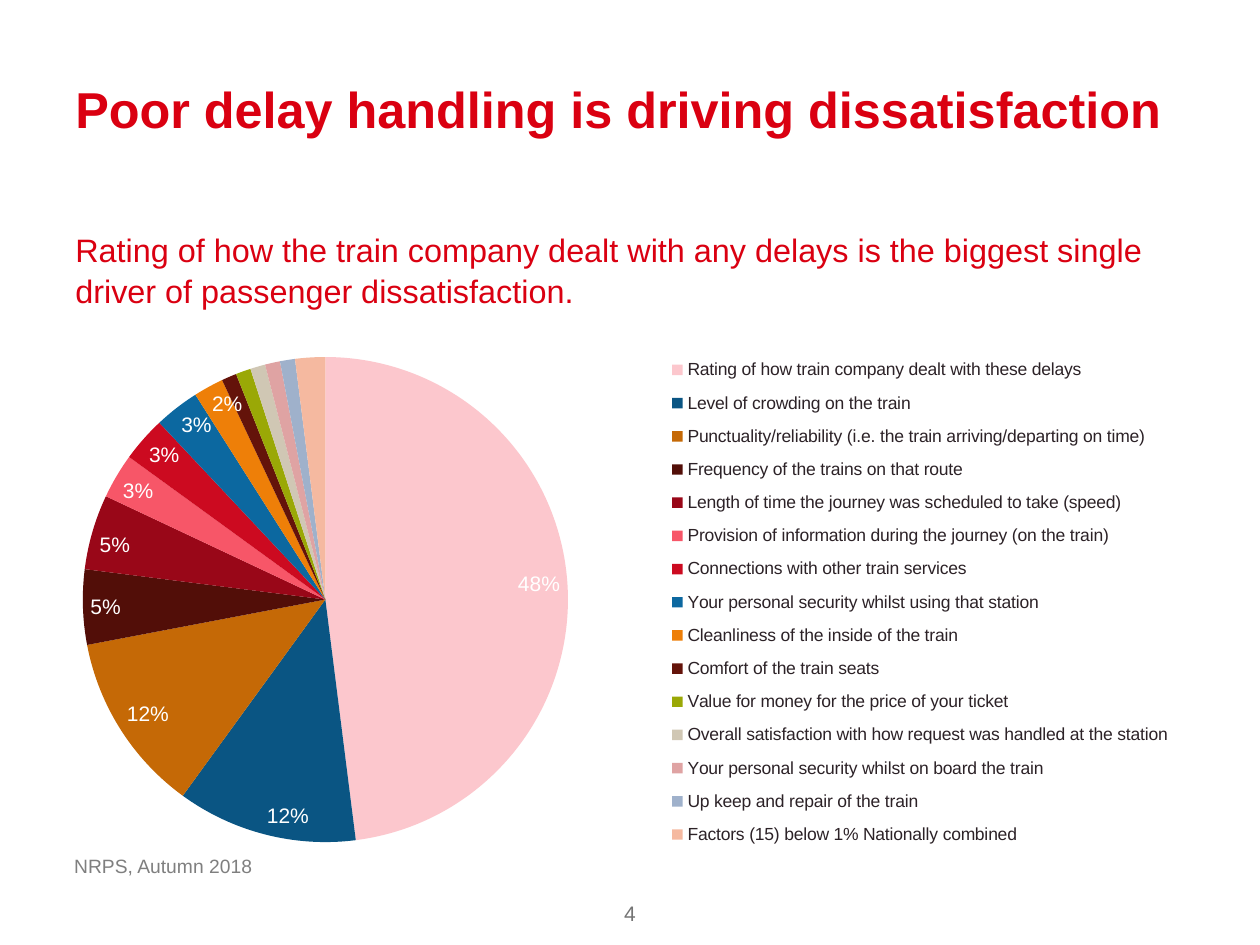
from lxml import etree
from pptx import Presentation
from pptx.chart.data import CategoryChartData
from pptx.dml.color import RGBColor
from pptx.enum.chart import XL_CHART_TYPE, XL_LABEL_POSITION, XL_LEGEND_POSITION
from pptx.enum.text import PP_ALIGN
from pptx.oxml.ns import qn
from pptx.util import Inches, Pt

PIE = XL_CHART_TYPE.PIE
INSIDE_END = XL_LABEL_POSITION.INSIDE_END
RIGHT = XL_LEGEND_POSITION.RIGHT
LEFT, CENTER = PP_ALIGN.LEFT, PP_ALIGN.CENTER
FONT = "Arial"
COLORS = {
    "heading": "DA0011",
    "source": "7F7F7F",
    "number": "747474",
    "legend": "2C2227",
    "label": "FFFFFF",
}
DRIVERS = [
    ("Rating of how train company dealt with these delays", 48, "FCC7CD"),
    ("Level of crowding on the train", 12, "0A5583"),
    ("Punctuality/reliability (i.e. the train arriving/departing on time)", 12, "C56906"),
    ("Frequency of the trains on that route", 5, "520E08"),
    ("Length of time the journey was scheduled to take (speed)", 5, "990718"),
    ("Provision of information during the journey (on the train)", 3, "F75668"),
    ("Connections with other train services", 3, "CC0A20"),
    ("Your personal security whilst using that station", 3, "0C68A0"),
    ("Cleanliness of the inside of the train", 2, "EE7F08"),
    ("Comfort of the train seats", 1, "64130A"),
    ("Value for money for the price of your ticket", 1, "9AA806"),
    ("Overall satisfaction with how request was handled at the station", 1, "D0C7B4"),
    ("Your personal security whilst on board the train", 1, "DFA3A3"),
    ("Up keep and repair of the train", 1, "9FB1CB"),
    ("Factors (15) below 1% Nationally combined", 2, "F5B9A0"),
]
LABELLED = 9


def style_font(font, size, color, bold=False):
    """Apply the slide's typeface with a size, colour and weight."""
    font.name = FONT
    font.size = Pt(size)
    font.bold = bold
    font.color.rgb = RGBColor.from_string(COLORS[color])


def add_text(slide, box, text, size, color, bold=False, align=LEFT, spacing=1.0, top=0.05):
    """Place one formatted paragraph in a box of inches."""
    frame = slide.shapes.add_textbox(*map(Inches, box)).text_frame
    frame.word_wrap = True
    frame.margin_top = Inches(top)
    paragraph = frame.paragraphs[0]
    paragraph.alignment = align
    paragraph.line_spacing = spacing
    run = paragraph.add_run()
    run.text = text
    style_font(run.font, size, color, bold)


def set_layout(parent, before, inner, x, y, w, h):
    """Fix the position of a chart part as fractions of the chart."""
    for old in parent.findall(qn("c:layout")):
        parent.remove(old)
    layout = etree.Element(qn("c:layout"))
    manual = etree.SubElement(layout, qn("c:manualLayout"))
    settings = [("xMode", "edge"), ("yMode", "edge"), ("x", x), ("y", y), ("w", w), ("h", h)]
    if inner:
        settings.insert(0, ("layoutTarget", "inner"))
    for tag, value in settings:
        etree.SubElement(manual, qn(f"c:{tag}")).set("val", str(value))
    parent.find(qn(before)).addprevious(layout)


def hide_label(labels, position, index):
    """Remove the label of one slice."""
    label = etree.Element(qn("c:dLbl"))
    etree.SubElement(label, qn("c:idx")).set("val", str(index))
    etree.SubElement(label, qn("c:delete")).set("val", "1")
    labels.insert(position, label)


def add_driver_pie(slide, box):
    """Draw the pie of dissatisfaction drivers with its legend."""
    data = CategoryChartData()
    data.categories = [name for name, _, _ in DRIVERS]
    data.add_series("Series 1", [share for _, share, _ in DRIVERS])
    chart = slide.shapes.add_chart(PIE, *map(Inches, box), data).chart
    style_font(chart.font, 18, "legend")
    chart.has_title = False
    chart.has_legend = True
    legend = chart.legend
    legend.position = RIGHT
    legend.include_in_layout = False
    style_font(legend.font, 10, "legend")

    plot = chart.plots[0]
    plot.vary_by_categories = True
    drivers = plot.series[0]
    for index, (_, _, color) in enumerate(DRIVERS):
        fill = drivers.points[index].format.fill
        fill.solid()
        fill.fore_color.rgb = RGBColor.from_string(color)

    labels = drivers.data_labels
    labels.show_percentage = True
    labels.show_value = False
    labels.number_format = "0%"
    labels.number_format_is_linked = False
    labels.position = INSIDE_END
    style_font(labels.font, 12, "label")
    for position, index in enumerate(range(LABELLED, len(DRIVERS))):
        hide_label(labels._element, position, index)

    plot_area = chart._chartSpace.chart.plotArea
    set_layout(plot_area, "c:pieChart", True, 0.09, 0.03, 0.4, 0.93)
    set_layout(legend._element, "c:overlay", False, 0.57, 0.01, 0.42, 0.98)


def add_heading(slide, box):
    """Write the title and the key message below it."""
    left, top, width, height = box
    add_text(slide, (left, top, width, 0.74),
             "Poor delay handling is driving dissatisfaction",
             28.8, "heading", bold=True, top=0.09)
    add_text(slide, (left, top + height - 0.7, 8.84, 0.7),
             "Rating of how the train company dealt with any delays is the biggest "
             "single driver of passenger dissatisfaction.",
             18.5, "heading", spacing=1.05)


def add_footer(slide, box):
    """Write the data source and the centred slide number."""
    left, top, width, height = box
    add_text(slide, (left, top, 3.4, 0.29), "NRPS, Autumn 2018", 11, "source")
    add_text(slide, (left, top + height - 0.34, width, 0.34), "4", 12, "number", align=CENTER)


def main():
    """Build and save the slide."""
    deck = Presentation()
    deck.slide_width, deck.slide_height = Inches(10), Inches(7.5)
    slide = deck.slides.add_slide(deck.slide_layouts[6])
    add_heading(slide, (0.5, 0.53, 9, 1.93))
    add_driver_pie(slide, (-0.21, 2.71, 9.63, 4.14))
    add_footer(slide, (0.49, 6.73, 9.02, 0.71))
    deck.save("out.pptx")


if __name__ == "__main__":
    main()
